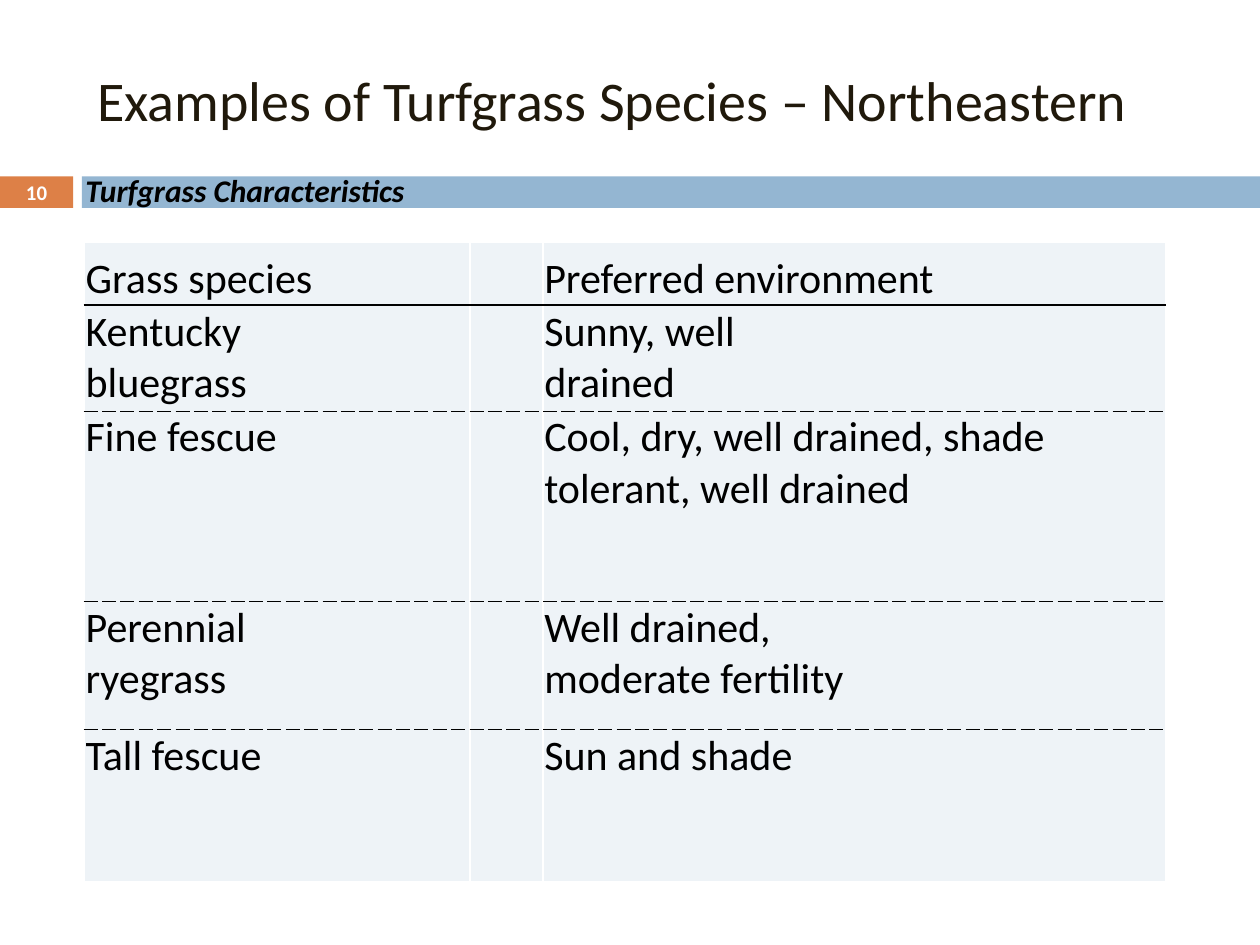
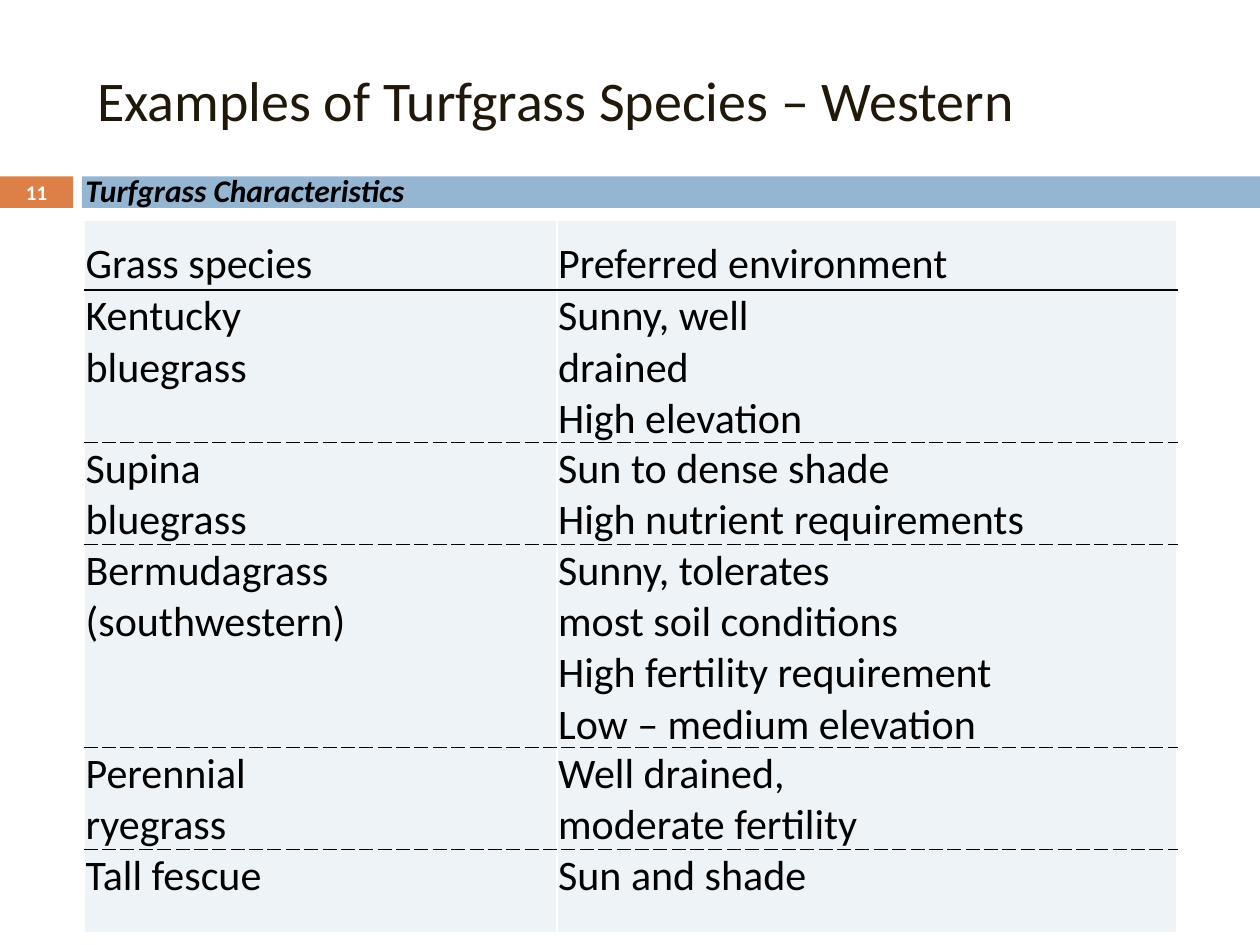
from dataclasses import dataclass
from lxml.etree import SubElement
from pptx import Presentation
from pptx.dml.color import RGBColor
from pptx.enum.shapes import MSO_SHAPE
from pptx.enum.text import MSO_ANCHOR, MSO_AUTO_SIZE, PP_ALIGN
from pptx.oxml.ns import qn
from pptx.util import Inches, Pt

SECTION = "Turfgrass Characteristics"
TITLE = "Examples of Turfgrass Species – {}"
HEADER = ("Grass species", "Preferred environment")
KENTUCKY = "Kentucky\nbluegrass"
RYEGRASS = ("Perennial\nryegrass", "Well drained,\nmoderate fertility")
TALL_FESCUE = ("Tall fescue", "Sun and shade")

REGIONS = [
    {
        "region": "Northeastern",
        "number": 10,
        "top": 1.92,
        "columns": (3.06, 0.58, 4.94),
        "heights": (0.5, 0.84, 1.51, 1.02, 1.21),
        "rows": [
            HEADER,
            (KENTUCKY, "Sunny, well\ndrained"),
            ("Fine fescue", "Cool, dry, well drained, shade tolerant, well drained"),
            RYEGRASS,
            TALL_FESCUE,
        ],
    },
    {
        "region": "Western",
        "number": 11,
        "top": 1.75,
        "columns": (3.75, 4.92),
        "heights": (0.55, 1.17, 0.78, 1.56, 0.78, 0.66),
        "rows": [
            HEADER,
            (KENTUCKY, "Sunny, well\ndrained\nHigh elevation"),
            ("Supina\nbluegrass", "Sun to dense shade\nHigh nutrient requirements"),
            ("Bermudagrass\n(southwestern)",
             "Sunny, tolerates\nmost soil conditions\nHigh fertility requirement\nLow – medium elevation"),
            RYEGRASS,
            TALL_FESCUE,
        ],
    },
]


@dataclass(frozen=True)
class Theme:
    """Colours, type sizes and shared positions."""
    font: str = "Calibri"
    title_colour: str = "20190B"
    ink: str = "000000"
    paper: str = "FFFFFF"
    accent: str = "DD8047"
    band: str = "94B6D2"
    cell: str = "EEF3F7"
    title_size: float = 32
    table_size: float = 24
    section_size: float = 18
    number_size: float = 11.9
    margin: float = 0.67
    band_top: float = 1.4
    band_height: float = 0.25
    number_width: float = 0.58
    band_left: float = 0.65
    width: float = 10
    height: float = 7.5


THEME = Theme()
GRID_LINE = (THEME.paper, 1, "solid")
HEADER_LINE = (THEME.ink, 1, "solid")
ROW_LINE = (THEME.ink, 0.25, "sysDash")


def write(frame, text, size, colour, bold=False, italic=False, align=PP_ALIGN.LEFT):
    """Fill a text frame with one paragraph for each line of text."""
    for index, line in enumerate(text.split("\n")):
        paragraph = frame.add_paragraph() if index else frame.paragraphs[0]
        paragraph.alignment = align
        run = paragraph.add_run()
        run.text = line
        run.font.name = THEME.font
        run.font.size = Pt(size)
        run.font.bold = bold
        run.font.italic = italic
        run.font.color.rgb = RGBColor.from_string(colour)


def add_band(slide, left, width, colour):
    """Draw one piece of the band below the title."""
    shape = slide.shapes.add_shape(
        MSO_SHAPE.RECTANGLE, Inches(left), Inches(THEME.band_top),
        Inches(width), Inches(THEME.band_height))
    shape.shadow.inherit = False
    shape.fill.solid()
    shape.fill.fore_color.rgb = RGBColor.from_string(colour)
    shape.line.fill.background()
    return shape


def add_frame(slide, region):
    """Add the title, band, slide number and section name."""
    title = slide.shapes.title
    title.left, title.top = Inches(THEME.margin), Inches(0.25)
    title.width, title.height = Inches(8.92), Inches(1.08)
    title.text_frame.auto_size = MSO_AUTO_SIZE.NONE
    title.text_frame.vertical_anchor = MSO_ANCHOR.MIDDLE
    write(title.text_frame, TITLE.format(region["region"]), THEME.title_size, THEME.title_colour)

    number = add_band(slide, 0, THEME.number_width, THEME.accent).text_frame
    number.margin_top = number.margin_bottom = 0
    number.vertical_anchor = MSO_ANCHOR.MIDDLE
    write(number, str(region["number"]), THEME.number_size, THEME.paper,
          bold=True, align=PP_ALIGN.CENTER)
    add_band(slide, THEME.band_left, THEME.width - THEME.band_left, THEME.band)

    section = slide.shapes.add_textbox(
        Inches(THEME.number_width), Inches(1.31), Inches(2.85), Inches(0.4)).text_frame
    section.word_wrap = False
    write(section, SECTION, THEME.section_size, THEME.ink, bold=True, italic=True)


def set_borders(cell, top, bottom):
    """Give a cell its four border lines."""
    properties = cell._tc.get_or_add_tcPr()
    sides = (("a:lnL", GRID_LINE), ("a:lnR", GRID_LINE), ("a:lnT", top), ("a:lnB", bottom))
    for position, (tag, (colour, width, dash)) in enumerate(sides):
        line = SubElement(properties, qn(tag), w=str(Pt(width)))
        fill = SubElement(line, qn("a:solidFill"))
        SubElement(fill, qn("a:srgbClr"), val=colour)
        SubElement(line, qn("a:prstDash"), val=dash)
        properties.insert(position, line)


def add_species_table(slide, region):
    """Add the table of species and their environments."""
    columns, heights, rows = region["columns"], region["heights"], region["rows"]
    table = slide.shapes.add_table(
        len(rows), len(columns), Inches(THEME.margin), Inches(region["top"]),
        Inches(sum(columns)), Inches(sum(heights))).table
    table.first_row = table.horz_banding = False
    for column, width in zip(table.columns, columns):
        column.width = Inches(width)
    for row, height in zip(table.rows, heights):
        row.height = Inches(height)

    lines = [GRID_LINE, HEADER_LINE] + [ROW_LINE] * (len(rows) - 2) + [GRID_LINE]
    text_columns = (0, len(columns) - 1)
    for row_index, texts in enumerate(rows):
        for cell in table.rows[row_index].cells:
            cell.fill.solid()
            cell.fill.fore_color.rgb = RGBColor.from_string(THEME.cell)
            set_borders(cell, lines[row_index], lines[row_index + 1])
        for column_index, text in zip(text_columns, texts):
            cell = table.cell(row_index, column_index)
            cell.margin_left = cell.margin_right = cell.margin_top = Inches(0.01)
            cell.margin_bottom = 0
            cell.vertical_anchor = MSO_ANCHOR.TOP if row_index else MSO_ANCHOR.BOTTOM
            write(cell.text_frame, text, THEME.table_size, THEME.ink)


def main():
    """Build and save the presentation."""
    presentation = Presentation()
    presentation.slide_width = Inches(THEME.width)
    presentation.slide_height = Inches(THEME.height)
    title_only = presentation.slide_layouts.get_by_name("Title Only")
    for region in REGIONS:
        slide = presentation.slides.add_slide(title_only)
        add_frame(slide, region)
        add_species_table(slide, region)
    presentation.save("out.pptx")


if __name__ == "__main__":
    main()
